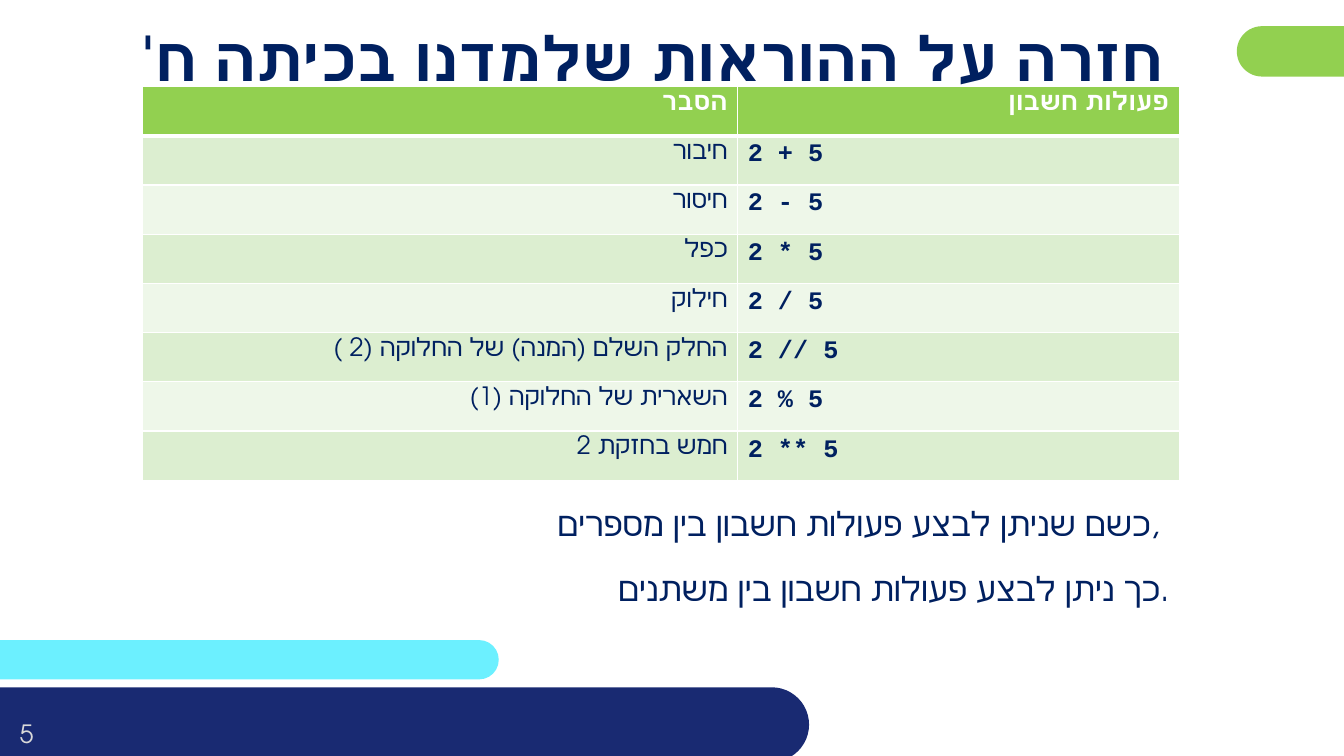
from lxml import etree
from pptx import Presentation
from pptx import util as u
from pptx.dml.color import RGBColor
from pptx.enum import shapes, text
from pptx.oxml.ns import qn

# Content
TITLE = "חזרה על ההוראות שלמדנו בכיתה ח'"
HEADER = ("הסבר", "פעולות חשבון")
OPERATIONS = [
    ("חיבור", "5 + 2"),
    ("חיסור", "5 - 2"),
    ("כפל", "5 * 2"),
    ("חילוק", "5 / 2"),
    ("החלק השלם (המנה) של החלוקה (2 )", "5 // 2"),
    ("השארית של החלוקה (1)", "5 % 2"),
    ("חמש בחזקת 2", "5 ** 2"),
]
CLOSING = ["כשם שניתן לבצע פעולות חשבון בין מספרים, ",
           "כך ניתן לבצע פעולות חשבון בין משתנים."]
PAGE = "5"

COLORS = {"cyan": "6CF0FF", "green": "92D050", "navy": "192A72",
          "ink": "002060", "white": "FFFFFF", "page": "D9D9D9",
          "odd": "DCEED0", "even": "EEF7E9"}
SANS, MONO = "TeX Gyre Adventor", "Courier New"
LEFT, CENTER, RIGHT = (text.PP_ALIGN.LEFT, text.PP_ALIGN.CENTER,
                       text.PP_ALIGN.RIGHT)

# Left, top, width, height in cm
BARS = [("cyan", (-0.66, 16.13, 13.23, 0.99)),
        ("green", (31.17, 0.66, 4.75, 1.27)),
        ("navy", (-1.07, 17.32, 21.46, 1.88))]
TABLE_LEFT, TABLE_TOP = 3.58, 2.18
COLUMNS = (15.01, 11.13)
ROW_HEIGHT = 1.24


def rgb(name):
    return RGBColor.from_string(COLORS[name])


def box(at):
    return [u.Cm(v) for v in at]


def write(p, words, size=18, font=SANS, color="ink", bold=False,
          align=RIGHT, rtl=True):
    p.alignment = align
    if rtl:
        p._p.get_or_add_pPr().set("rtl", "1")
    r = p.add_run()
    r.text = words
    r.font.size, r.font.bold, r.font.name = u.Pt(size), bold, font
    r.font.color.rgb = rgb(color)
    etree.SubElement(r._r.get_or_add_rPr(), qn("a:cs"), typeface=font)


def text_box(s, at, anchor=text.MSO_ANCHOR.TOP):
    tf = s.shapes.add_textbox(*box(at)).text_frame
    tf.word_wrap = True
    tf.vertical_anchor = anchor
    return tf


def border(cell, bottom):
    tcPr = cell._tc.get_or_add_tcPr()
    for i, (side, width) in enumerate(zip("LRTB", (1, 1, 1, bottom))):
        ln = etree.Element(qn("a:ln" + side), w=str(u.Pt(width)))
        fill = etree.SubElement(ln, qn("a:solidFill"))
        etree.SubElement(fill, qn("a:srgbClr"), val=COLORS["white"])
        tcPr.insert(i, ln)


def main():
    prs = Presentation()
    prs.slide_width, prs.slide_height = u.Cm(33.87), u.Cm(19.05)
    s = prs.slides.add_slide(prs.slide_layouts[6])

    # Rounded bars
    for color, at in BARS:
        sp = s.shapes.add_shape(shapes.MSO_SHAPE.ROUNDED_RECTANGLE, *box(at))
        sp.adjustments[0] = 0.5
        sp.shadow.inherit = False
        sp.fill.solid()
        sp.fill.fore_color.rgb = rgb(color)
        sp.line.fill.background()

    # Page number and title
    tf = text_box(s, (-0.46, 17.75, 2.26, 1.45), text.MSO_ANCHOR.MIDDLE)
    write(tf.paragraphs[0], PAGE, color="page", align=CENTER, rtl=False)
    tf = text_box(s, (2.84, 0.43, 27.23, 2.01), text.MSO_ANCHOR.MIDDLE)
    tf.margin_left = tf.margin_right = u.Cm(0.1)
    tf.margin_top = tf.margin_bottom = 0
    write(tf.paragraphs[0], TITLE, size=44, bold=True, align=CENTER)

    # Closing lines
    tf = text_box(s, (TABLE_LEFT, 12.14, sum(COLUMNS), 3.58))
    for i, line in enumerate(CLOSING):
        p = tf.add_paragraph() if i else tf.paragraphs[0]
        p.line_spacing, p.space_after = 1.4, u.Pt(6)
        write(p, line, size=24, rtl=False)

    # Table of operations
    rows = [HEADER] + OPERATIONS
    at = (TABLE_LEFT, TABLE_TOP, sum(COLUMNS), ROW_HEIGHT * len(rows))
    table = s.shapes.add_table(len(rows), len(COLUMNS), *box(at)).table
    for column, width in zip(table.columns, COLUMNS):
        column.width = u.Cm(width)
    for i, row in enumerate(rows):
        table.rows[i].height = u.Cm(ROW_HEIGHT)
        fill = "green" if i == 0 else "odd" if i % 2 else "even"
        for j, words in enumerate(row):
            cell = table.cell(i, j)
            cell.fill.solid()
            cell.fill.fore_color.rgb = rgb(fill)
            border(cell, bottom=1 if i else 3)
            p = cell.text_frame.paragraphs[0]
            if i == 0:
                write(p, words, color="white", bold=True)
            elif j == 0:
                write(p, words)
            else:
                write(p, words, font=MONO, bold=True, align=LEFT)

    prs.save("out.pptx")


if __name__ == "__main__":
    main()
